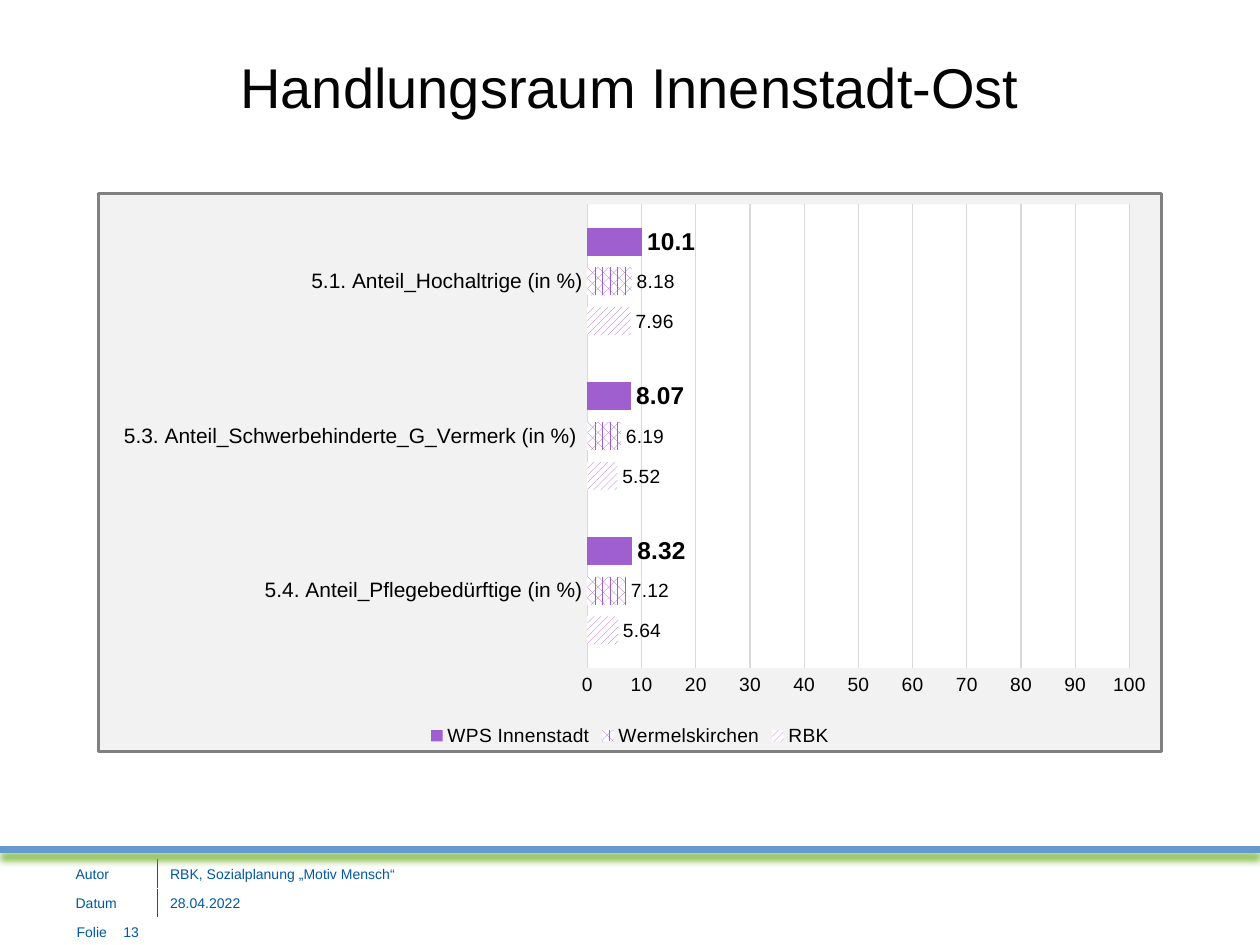
from lxml import etree
from pptx import Presentation
from pptx.chart.data import CategoryChartData
from pptx.dml.color import RGBColor
from pptx.enum.chart import XL_CHART_TYPE, XL_LABEL_POSITION, XL_LEGEND_POSITION, XL_TICK_MARK
from pptx.enum.dml import MSO_PATTERN
from pptx.enum.shapes import MSO_CONNECTOR
from pptx.enum.text import MSO_ANCHOR, PP_ALIGN
from pptx.oxml import parse_xml
from pptx.oxml.ns import nsdecls, qn
from pptx.util import Inches, Pt

BAR_CLUSTERED = XL_CHART_TYPE.BAR_CLUSTERED
OUTSIDE_END = XL_LABEL_POSITION.OUTSIDE_END
LEGEND_BOTTOM = XL_LEGEND_POSITION.BOTTOM
NO_TICK = XL_TICK_MARK.NONE
DIAGONAL = MSO_PATTERN.WIDE_UPWARD_DIAGONAL
DOTTED = MSO_PATTERN.PERCENT_60
MIDDLE, BOTTOM = MSO_ANCHOR.MIDDLE, MSO_ANCHOR.BOTTOM

NAVY = RGBColor(0x00, 0x57, 0xA3)
BLUE = RGBColor(0x66, 0x99, 0xCC)
GREEN = RGBColor(0x6A, 0xB0, 0x23)
PURPLE = RGBColor(0x9F, 0x5F, 0xCF)
INK = RGBColor(0x04, 0x04, 0x04)
BLACK = RGBColor(0x00, 0x00, 0x00)
WHITE = RGBColor(0xFF, 0xFF, 0xFF)
PANEL = RGBColor(0xF2, 0xF2, 0xF2)
FRAME = RGBColor(0x80, 0x80, 0x80)
GRID = RGBColor(0xD9, 0xD9, 0xD9)

CATEGORIES = [
    "5.4. Anteil_Pflegebedürftige (in %)",
    "5.3. Anteil_Schwerbehinderte_G_Vermerk (in %) ",
    "5.1. Anteil_Hochaltrige (in %)",
]
# name, values, pattern (None = solid), label size, label bold
SERIES = [
    ("RBK", (5.64, 5.52, 7.96), DIAGONAL, 11, False),
    ("Wermelskirchen", (7.12, 6.19, 8.18), DOTTED, 11, False),
    ("WPS Innenstadt", (8.32, 8.07, 10.1), None, 14, True),
]
PLOT_LAYOUT = {"x": 0.46, "y": 0.02, "w": 0.51, "h": 0.83}
FOOTER = [("Autor", "RBK, Sozialplanung „Motiv Mensch“"), ("Datum", "28.04.2022")]


def box(left, top, width, height):
    return Inches(left), Inches(top), Inches(width), Inches(height)


def area_properties(fill, line="<a:ln><a:noFill/></a:ln>"):
    return parse_xml(
        f'<c:spPr {nsdecls("c", "a")}><a:solidFill><a:srgbClr val="{fill}"/></a:solidFill>{line}</c:spPr>'
    )


class SlideBuilder:
    def __init__(self, slide, font="Arial"):
        self.slide = slide
        self.font = font

    def style(self, font, size, color, bold=False):
        font.name, font.size, font.bold = self.font, Pt(size), bold
        font.color.rgb = color

    def run(self, paragraph, text, size, color):
        run = paragraph.add_run()
        run.text = text
        self.style(run.font, size, color)

    def title(self, text, place):
        title = self.slide.shapes.title
        title.left, title.top, title.width, title.height = place
        title.text_frame.vertical_anchor = MIDDLE
        paragraph = title.text_frame.paragraphs[0]
        paragraph.alignment = PP_ALIGN.CENTER
        self.run(paragraph, text, 32, INK)

    def page_label(self, label, number, place):
        frame = self.slide.shapes.add_textbox(*place).text_frame
        frame.word_wrap = True
        frame.vertical_anchor = MIDDLE
        paragraph = frame.paragraphs[0]
        tabs = etree.SubElement(paragraph._p.get_or_add_pPr(), qn("a:tabLst"))
        etree.SubElement(tabs, qn("a:tab"), pos=str(Inches(0.37)), algn="l")
        self.run(paragraph, f"{label}\t{number}", 8, NAVY)

    def rule(self, top):
        """Full-width blue line with a green shadow below it."""
        rule = self.slide.shapes.add_connector(
            MSO_CONNECTOR.STRAIGHT, 0, Inches(top), Inches(10), Inches(top))
        rule.line.color.rgb = BLUE
        rule.line.width = Pt(4)
        rule._element.spPr.append(parse_xml(
            f'<a:effectLst {nsdecls("a")}><a:outerShdw blurRad="{Pt(4)}" dist="{Pt(4)}" dir="5400000" '
            f'rotWithShape="0"><a:srgbClr val="{GREEN}"/></a:outerShdw></a:effectLst>'))

    def footer_table(self, rows, widths, place):
        table = self.slide.shapes.add_table(len(rows), len(widths), *place).table
        table.first_row = table.horz_banding = False
        for column, width in zip(table.columns, widths):
            column.width = Inches(width)
        for r, texts in enumerate(rows):
            for c, text in enumerate(texts):
                cell = table.cell(r, c)
                cell.vertical_anchor = BOTTOM
                self.run(cell.text_frame.paragraphs[0], text, 8, NAVY)
                self.divider(cell, "lnL" if c else "lnR")
                cell.fill.background()

    def divider(self, cell, side):
        cell._tc.get_or_add_tcPr().append(parse_xml(
            f'<a:{side} {nsdecls("a")} w="{Pt(1)}"><a:solidFill><a:srgbClr val="{NAVY}"/></a:solidFill></a:{side}>'))

    def bar_chart(self, categories, series_rows, place):
        data = CategoryChartData()
        data.categories = categories
        for name, values, *_ in series_rows:
            data.add_series(name, values)
        chart = self.slide.shapes.add_chart(BAR_CLUSTERED, *place, data).chart
        self.style(chart.font, 10, NAVY)
        chart.has_title = False
        chart.has_legend = True
        chart.legend.position = LEGEND_BOTTOM
        chart.legend.include_in_layout = False
        self.style(chart.legend.font, 11, BLACK)

        plot = chart.plots[0]
        plot.gap_width, plot.overlap = 168, -42
        plot.vary_by_categories = False
        for series, (_, _, pattern, size, bold) in zip(plot.series, series_rows):
            self.bar_style(series, pattern, size, bold)
        self.axes(chart)
        self.chart_areas(chart)

    def bar_style(self, series, pattern, label_size, bold):
        fill = series.format.fill
        if pattern is None:
            fill.solid()
        else:
            fill.patterned()
            fill.pattern = pattern
            fill.back_color.rgb = WHITE
        fill.fore_color.rgb = PURPLE
        series.invert_if_negative = False
        labels = series.data_labels
        labels.show_value = True
        labels.position = OUTSIDE_END
        self.style(labels.font, label_size, BLACK, bold)

    def axes(self, chart):
        for axis, size in ((chart.category_axis, 12), (chart.value_axis, 11)):
            axis.major_tick_mark = axis.minor_tick_mark = NO_TICK
            self.style(axis.tick_labels.font, size, BLACK)
        values = chart.value_axis
        values.minimum_scale, values.maximum_scale, values.major_unit = 0, 100, 10
        values.tick_labels.number_format = "0"
        values.tick_labels.number_format_is_linked = False
        values.format.line.fill.background()
        for line in (chart.category_axis.format.line, values.major_gridlines.format.line):
            line.color.rgb = GRID
            line.width = Pt(0.75)

    def chart_areas(self, chart):
        """Fill and frame the chart, and fix the place of the inner plot."""
        border = (f'<a:ln w="{Pt(1.75)}"><a:solidFill><a:srgbClr val="{FRAME}"/></a:solidFill></a:ln>')
        chart_node = chart._chartSpace.find(qn("c:chart"))
        chart_node.addnext(area_properties(PANEL, border))
        plot_area = chart_node.find(qn("c:plotArea"))
        plot_area.append(area_properties(WHITE))
        for layout in plot_area.findall(qn("c:layout")):
            plot_area.remove(layout)
        modes = '<c:layoutTarget val="inner"/><c:xMode val="edge"/><c:yMode val="edge"/>'
        sizes = "".join(f'<c:{key} val="{value}"/>' for key, value in PLOT_LAYOUT.items())
        plot_area.insert(0, parse_xml(
            f'<c:layout {nsdecls("c")}><c:manualLayout>{modes}{sizes}</c:manualLayout></c:layout>'))


def main():
    deck = Presentation()
    deck.slide_width, deck.slide_height = Inches(10), Inches(7.5)
    builder = SlideBuilder(deck.slides.add_slide(deck.slide_layouts[5]))
    builder.page_label("Folie", 13, box(0.51, 7.2, 1.18, 0.4))
    builder.footer_table(FOOTER, (0.75, 2.41), box(0.5, 6.82, 3.16, 0.46))
    builder.rule(6.74)
    builder.title("Handlungsraum Innenstadt-Ost", box(0.5, 0.3, 9, 0.77))
    builder.bar_chart(CATEGORIES, SERIES, box(0.77, 1.52, 8.46, 4.46))
    deck.save("out.pptx")


if __name__ == "__main__":
    main()
